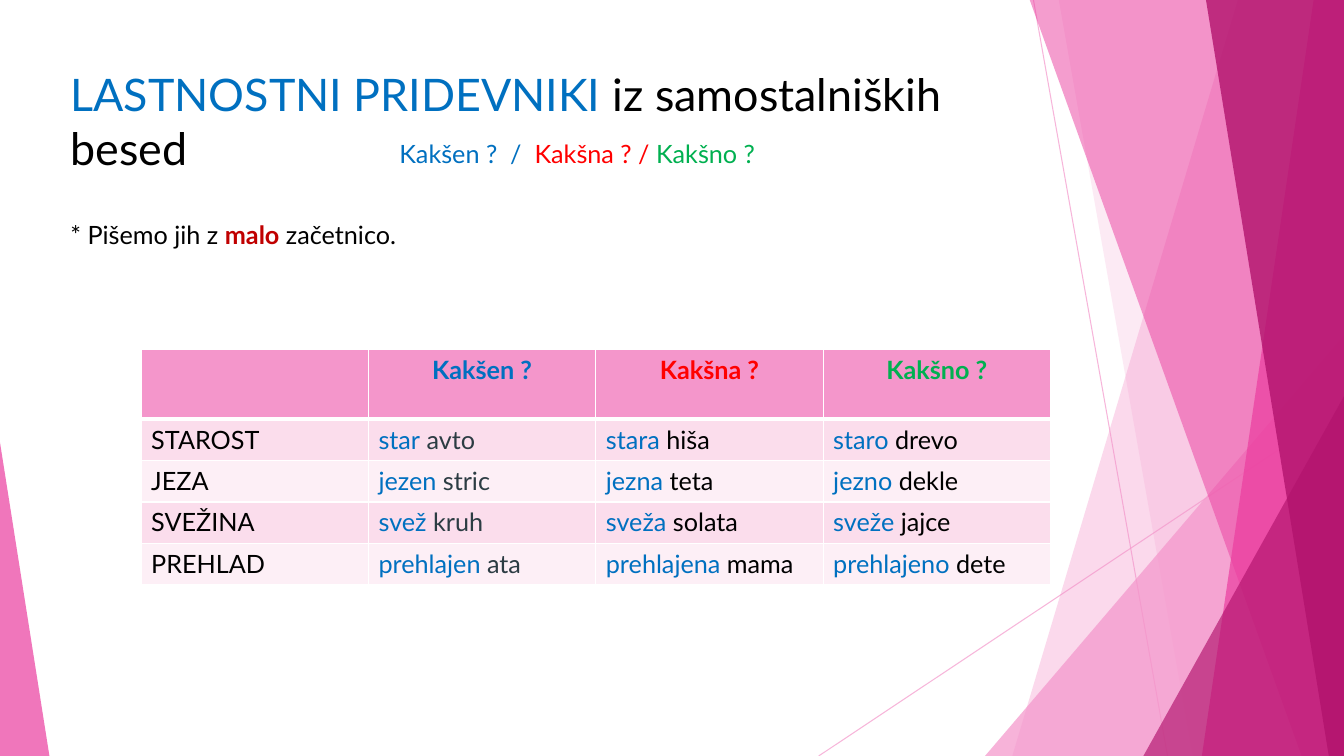
from lxml import etree
from pptx import Presentation
from pptx.dml.color import RGBColor
from pptx.enum import shapes, text
from pptx.oxml import ns
from pptx.util import Inches, Pt

HUES = {
    "blue": "0070C0", "red": "FF0000", "green": "00B050", "dark": "C00000",
    "black": "000000", "slate": "2C3C43", "white": "FFFFFF",
    "pink": "F496CB", "rose": "EB3D9F", "plum": "B2136D",
    "odd": "FBDDEC", "even": "FDEFF6",
}


def write(para, runs, size=18, bold=False):
    """Add (words, hue) runs to a paragraph; a third item sets bold."""
    for words, hue, *strong in runs:
        run = para.add_run()
        run.text = words
        run.font.name = "Lato"
        run.font.size = Pt(size)
        run.font.bold = bool(strong) or bold
        run.font.color.rgb = RGBColor.from_string(HUES[hue])


def fade(shape, alpha):
    """Make the RGB colours of a shape see-through, alpha in percent."""
    for tint in shape.element.iter(ns.qn("a:srgbClr")):
        etree.SubElement(tint, ns.qn("a:alpha"), val=str(alpha * 1000))


deck = Presentation()
deck.slide_width, deck.slide_height = Inches(13.33), Inches(7.5)
slide = deck.slides.add_slide(deck.slide_layouts[5])
items = slide.shapes

# Thin background lines
for ends in [(10.25, 0, 11.58, 7.5), (13.33, 4.03, 8.12, 7.5)]:
    line = items.add_connector(shapes.MSO_CONNECTOR.STRAIGHT, *map(Inches, ends))
    line.line.color.rgb = RGBColor.from_string(HUES["pink"])
    line.line.width = Pt(0.75)
    etree.SubElement(line.element.spPr, ns.qn("a:effectLst"))
    fade(line, 70)

# Bands run from a top corner to a bottom corner along the right edge;
# triangles have left, top, width, height and apex
panes = [
    ("band", (12.28, 10.04), "pink", 36),
    ("band", (10.5, 11.83), "pink", 20),
    ("peak", (9.77, 3.33, 3.56, 4.17, 1), "pink", 72),
    ("band", (10.21, 12.91), "rose", 50),
    ("band", (13.03, 11.92), "rose", 70),
    ("band", (11.96, 13.18), "plum", 80),
    ("peak", (11.34, 3.93, 1.99, 3.57, 1), "plum", 66),
    ("peak", (0, 4.39, 0.49, 3.11, 0), "rose", 70),
]
for kind, spot, hue, alpha in panes:
    if kind == "band":
        top, base = spot
        path = items.build_freeform(Inches(top), Inches(-0.01))
        path.add_line_segments([(Inches(x), Inches(y)) for x, y in
                                [(13.33, -0.01), (13.33, 7.5), (base, 7.5)]])
        pane = path.convert_to_shape()
    else:
        *box, apex = spot
        pane = items.add_shape(shapes.MSO_SHAPE.ISOSCELES_TRIANGLE, *map(Inches, box))
        pane.adjustments[0] = apex
    pane.shadow.inherit = False
    pane.fill.solid()
    pane.fill.fore_color.rgb = RGBColor.from_string(HUES[hue])
    pane.line.fill.background()
    fade(pane, alpha)

# Heading and notes
title = items.title
title.left, title.top = Inches(0.6), Inches(0.61)
title.width, title.height = Inches(9.83), Inches(0.98)
frame = title.text_frame
frame.word_wrap = True
frame.auto_size = text.MSO_AUTO_SIZE.NONE
frame.vertical_anchor = text.MSO_ANCHOR.TOP
head = frame.paragraphs[0]
head.alignment = text.PP_ALIGN.LEFT
write(head, [("LASTNOSTNI PRIDEVNIKI ", "blue"),
             ("iz samostalniških besed", "black")], size=32)

notes = [
    ((0.6, 2.13, 3.61, 0.4), text.PP_ALIGN.LEFT,
     [("* Pišemo jih z ", "black"), ("malo", "dark", True), (" začetnico.", "black")]),
    ((3.55, 1.32, 4.35, 0.4), text.PP_ALIGN.CENTER,
     [("Kakšen ?  /  ", "blue"), ("Kakšna ? / ", "red"), ("Kakšno ?", "green")]),
]
for box, align, runs in notes:
    frame = items.add_textbox(*map(Inches, box)).text_frame
    frame.word_wrap = align == text.PP_ALIGN.CENTER
    frame.paragraphs[0].alignment = align
    write(frame.paragraphs[0], runs)

# Table of adjectives
asks = [("Kakšen ?", "blue"), ("Kakšna ?", "red"), ("Kakšno ?", "green")]
words = [
    ("STAROST", "star avto", "stara hiša", "staro drevo"),
    ("JEZA", "jezen stric", "jezna teta", "jezno dekle"),
    ("SVEŽINA", "svež kruh", "sveža solata", "sveže jajce"),
    ("PREHLAD", "prehlajen ata", "prehlajena mama", "prehlajeno dete"),
]
table = items.add_table(5, 4, Inches(1.4), Inches(3.47),
                        Inches(9.02), Inches(2.32)).table
for col in table.columns:
    col.width = Inches(9.02 / 4)
for r, row in enumerate(table.rows):
    row.height = Inches(0.41 if r else 0.69)
    for c, cell in enumerate(row.cells):
        para = cell.text_frame.paragraphs[0]
        if r == 0:
            para.alignment = text.PP_ALIGN.CENTER
            if c:
                write(para, [asks[c - 1]], bold=True)
        elif c == 0:
            write(para, [(words[r - 1][0], "black")])
        else:
            trait, noun = words[r - 1][c].split()
            write(para, [(trait, "blue"),
                         (" " + noun, "slate" if c == 1 else "black")])
        cell.fill.solid()
        shade = "pink" if r == 0 else "odd" if r % 2 else "even"
        cell.fill.fore_color.rgb = RGBColor.from_string(HUES[shade])
        props = cell._tc.get_or_add_tcPr()
        for n, side in enumerate("LRTB"):
            thick = (r, side) in [(0, "B"), (1, "T")]
            edge = etree.Element(ns.qn("a:ln" + side), w=str(Pt(3 if thick else 1)))
            paint = etree.SubElement(edge, ns.qn("a:solidFill"))
            etree.SubElement(paint, ns.qn("a:srgbClr"), val=HUES["white"])
            props.insert(n, edge)

deck.save("out.pptx")
